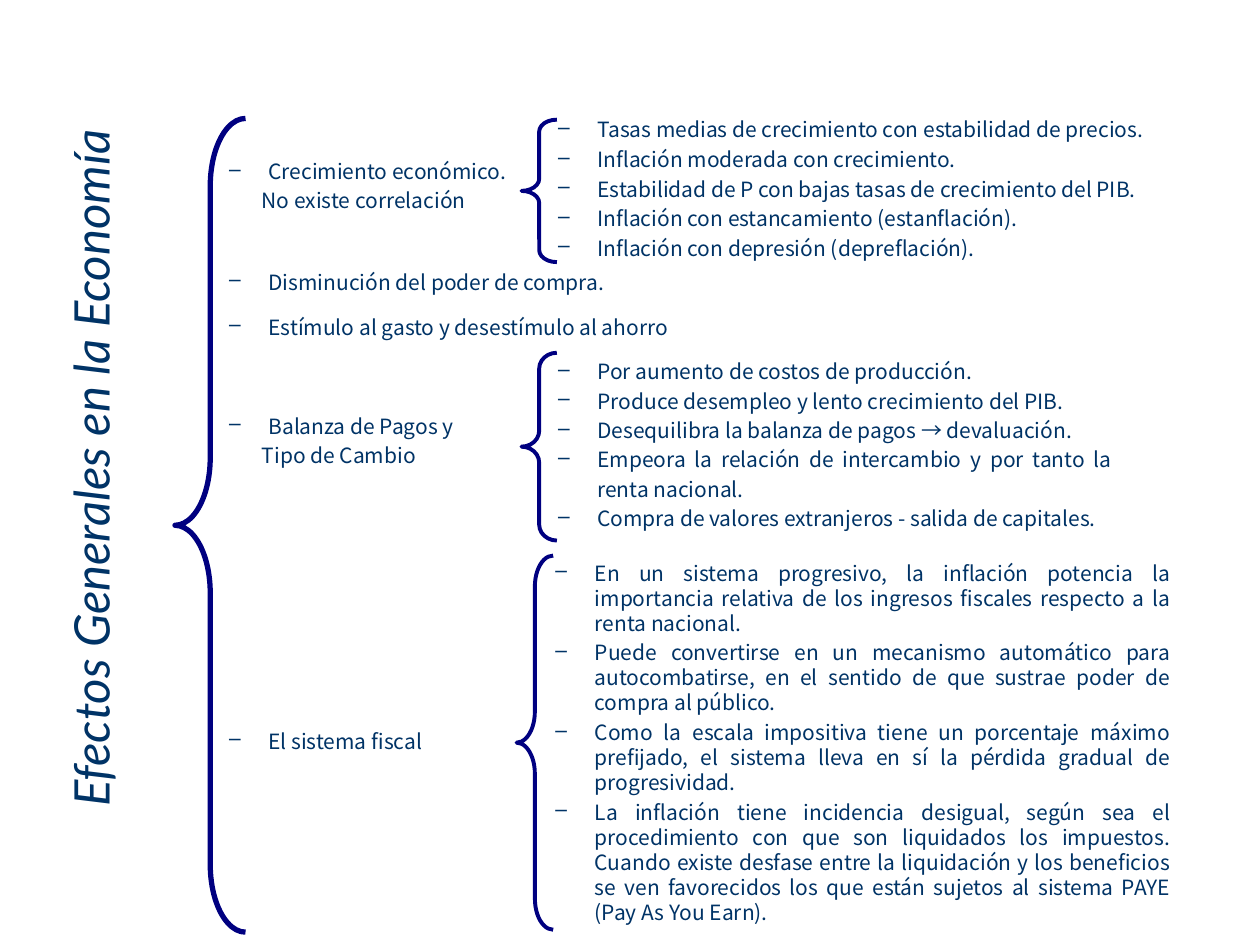
from pptx import Presentation
from pptx.dml.color import RGBColor as Rgb
from pptx.enum.shapes import MSO_SHAPE as Shape
from pptx.enum.text import MSO_ANCHOR as Anchor, PP_ALIGN as Align
from pptx.oxml.xmlchemy import OxmlElement as Elem
from pptx.util import Pt

COLORS = {"text": "003366", "brace": "000080"}
BODY, HEAD = "Noto Sans CJK KR", "Lato"

GROWTH = [
    "Tasas medias de crecimiento con estabilidad de precios.",
    "Inflación moderada con crecimiento.",
    "Estabilidad de P con bajas tasas de crecimiento del PIB.",
    "Inflación con estancamiento (estanflación).",
    "Inflación con depresión (depreflación).",
]
BALANCE = [
    "Por aumento de costos de producción.",
    "Produce desempleo y lento crecimiento del PIB.",
    "Desequilibra la balanza de pagos → devaluación.",
    "Empeora la relación de intercambio y por tanto la renta nacional.",
    "Compra de valores extranjeros - salida de capitales.",
]
FISCAL = [
    "En un sistema progresivo, la inflación potencia la importancia relativa "
    "de los ingresos fiscales respecto a la renta nacional.",
    "Puede convertirse en un mecanismo automático para autocombatirse, en el "
    "sentido de que sustrae poder de compra al público.",
    "Como la escala impositiva tiene un porcentaje máximo prefijado, el "
    "sistema lleva en sí la pérdida gradual de progresividad.",
    "La inflación tiene incidencia desigual, según sea el procedimiento con "
    "que son liquidados los impuestos. Cuando existe desfase entre la "
    "liquidación y los beneficios se ven favorecidos los que están sujetos al "
    "sistema PAYE (Pay As You Earn).",
]


class Deck:
    """Holds the style and the current slide."""

    def __init__(self, wide, high):
        self.prs = Presentation()
        self.prs.slide_width, self.prs.slide_height = Pt(wide), Pt(high)
        self.slide = self.prs.slides.add_slide(self.prs.slide_layouts[6])

    def frame(self, *box):
        shape = self.slide.shapes.add_textbox(*map(Pt, box))
        shape.text_frame.word_wrap = True
        return shape

    def run(self, para, text, size, font, italic=False):
        run = para.add_run()
        run.text = text
        run.font.size, run.font.name, run.font.italic = Pt(size), font, italic
        run.font.color.rgb = Rgb.from_string(COLORS["text"])

    def title(self, text, *box):
        shape = self.frame(*box)
        shape.rotation = 270
        shape.text_frame.vertical_anchor = Anchor.MIDDLE
        para = shape.text_frame.paragraphs[0]
        para.alignment = Align.CENTER
        self.run(para, text, 28, HEAD, True)

    def items(self, lines, box, pitch=14.3, gap=2.6, align=Align.JUSTIFY, note=None):
        body = self.frame(*box).text_frame
        for i, line in enumerate(lines):
            para = body.paragraphs[0] if i == 0 else body.add_paragraph()
            self.line(para, line, pitch, gap if i else 0, align)
            self.dash(para)
        if note:
            para = body.add_paragraph()
            self.line(para, note, pitch, gap, align)
            para._p.get_or_add_pPr().set("marL", str(Pt(54.7)))

    def line(self, para, text, pitch, gap, align):
        para.alignment = align
        para.line_spacing, para.space_before = Pt(pitch), Pt(gap)
        self.run(para, text, 12, BODY)

    def dash(self, para):
        props = para._p.get_or_add_pPr()
        props.set("marL", str(Pt(58.5)))
        props.set("indent", str(Pt(-22.5)))
        mark = Elem("a:buChar")
        mark.set("char", "–")
        props.append(mark)

    def brace(self, bend, weight, *box):
        shape = self.slide.shapes.add_shape(Shape.LEFT_BRACE, *map(Pt, box))
        shape.shadow.inherit = False
        shape.adjustments[0] = bend
        shape.fill.background()
        shape.line.width = Pt(weight)
        shape.line.color.rgb = Rgb.from_string(COLORS["brace"])


def main():
    deck = Deck(720, 540)
    deck.title("Efectos Generales en la Economía", -189.4, 247, 481.7, 41)

    deck.brace(0.96, 3, 100, 67.7, 40.3, 465)
    deck.brace(0.34, 2.25, 298, 68.4, 20.2, 81.4)
    deck.brace(0.45, 2.25, 298, 201.6, 20.2, 107.3)
    deck.brace(0.85, 2.25, 295.2, 317.5, 20.9, 213.8)

    deck.items(GROWTH, (275.8, 63.4, 420, 108))
    deck.items(BALANCE, (275.8, 199, 367, 108), pitch=16.8, gap=0)
    deck.items(FISCAL, (274.3, 316.8, 401.8, 221))

    left = Align.LEFT
    deck.items(["Crecimiento económico."], (87.8, 87.1, 234, 54), align=left,
               note="No existe correlación")
    deck.items(["Disminución del poder de compra.",
                "Estímulo al gasto y desestímulo al ahorro"],
               (87.8, 150.5, 336, 54), gap=11.4, align=left)
    deck.items(["Balanza de Pagos y"], (87.8, 232.6, 192, 54), align=left,
               note="Tipo de Cambio")
    deck.items(["El sistema fiscal"], (87.8, 412.6, 192, 24), align=left)

    deck.prs.save("out.pptx")


if __name__ == "__main__":
    main()
